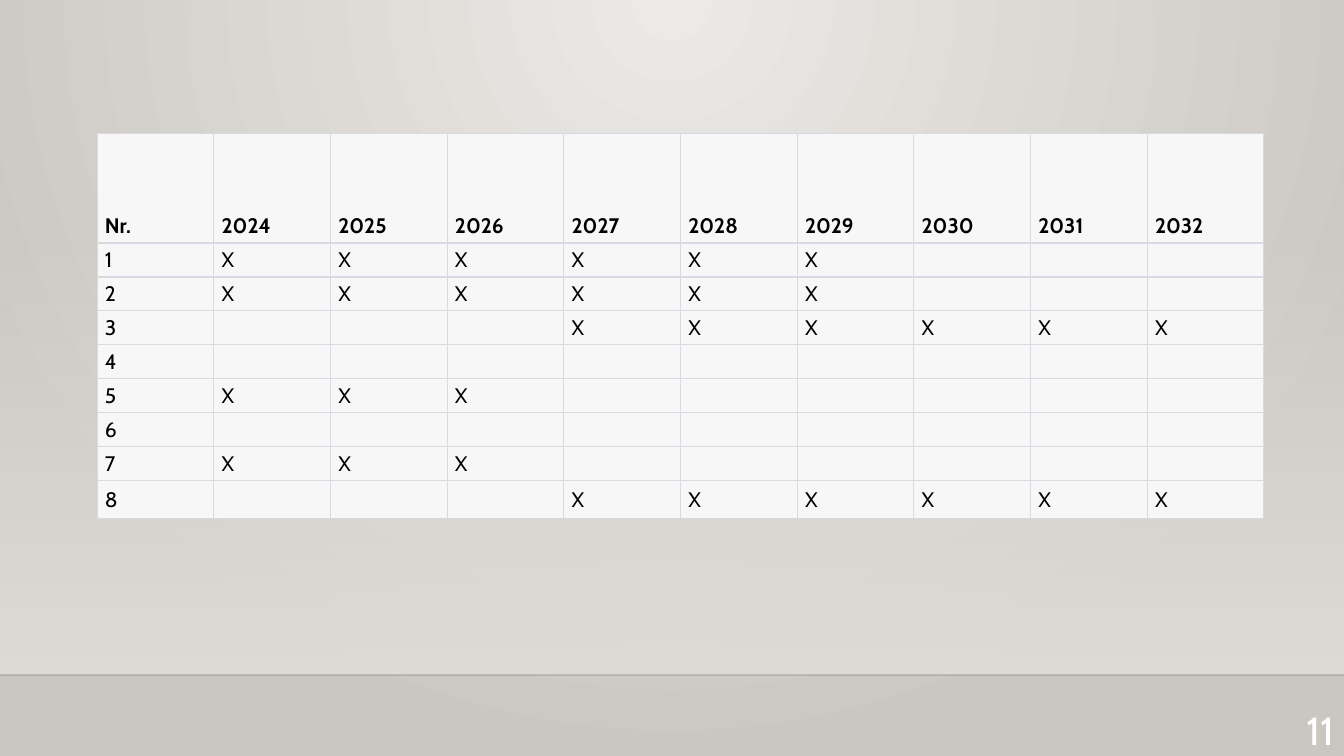
from lxml import etree
from pptx import Presentation
from pptx.dml.color import RGBColor
from pptx.enum.shapes import MSO_CONNECTOR, MSO_SHAPE
from pptx.enum.text import MSO_ANCHOR, PP_ALIGN
from pptx.oxml.ns import qn
from pptx.util import Pt

RECTANGLE = MSO_SHAPE.RECTANGLE
STRAIGHT = MSO_CONNECTOR.STRAIGHT
BOTTOM, MIDDLE = MSO_ANCHOR.BOTTOM, MSO_ANCHOR.MIDDLE
RIGHT = PP_ALIGN.RIGHT
EMU_PER_PX = 12192000 / 1344
WIDTH, HEIGHT, FLOOR = 1344, 756, 675
FONT = "Cabin"
COLORS = {
    "glow": "ECEAE7", "edge": "CAC7C1", "wall": "DFDBD5", "floor_line": "000001",
    "cell": "F7F7F8", "border": "D9D9E3", "text": "000000", "number": "FFFFFF",
}
YEARS = range(2024, 2033)
EARLY, LATE = range(2024, 2027), range(2027, 2033)
SCHEDULE = [range(2024, 2030), range(2024, 2030), LATE, (), EARLY, (), EARLY, LATE]


def px(length):
    return round(length * EMU_PER_PX)


def color(name):
    return RGBColor.from_string(COLORS[name])


class SlideBuilder:
    """Draws styled elements on one blank slide."""

    def __init__(self, deck):
        deck.slide_width, deck.slide_height = px(WIDTH), px(HEIGHT)
        self.page = deck.slides.add_slide(deck.slide_layouts[6])

    def gradient(self, fill, first, last):
        fill.gradient()
        for stop, name in zip(fill.gradient_stops, (first, last)):
            stop.color.rgb = color(name)

    def alpha(self, element, percent):
        tint = next(element.iter(qn("a:srgbClr")))
        etree.SubElement(tint, qn("a:alpha")).set("val", str(percent * 1000))

    def background(self):
        self.gradient(self.page.background.fill, "glow", "edge")
        linear = next(self.page.element.iter(qn("a:lin")))
        radial = etree.Element(qn("a:path"), {"path": "circle"})
        focus = {"l": "43000", "t": "0", "r": "43000", "b": "100000"}
        etree.SubElement(radial, qn("a:fillToRect"), focus)
        linear.getparent().replace(linear, radial)

    def fading_panel(self, top, bottom):
        panel = self.page.shapes.add_shape(RECTANGLE, 0, px(top), px(WIDTH), px(bottom - top))
        panel.shadow.inherit = False
        panel.line.fill.background()
        self.gradient(panel.fill, "wall", "wall")
        panel.fill.gradient_angle = 270
        self.alpha(panel.element, 0)

    def line(self, top):
        line = self.page.shapes.add_connector(STRAIGHT, 0, px(top), px(WIDTH), px(top))
        line.line.color.rgb = color("floor_line")
        line.line.width = Pt(1)
        self.alpha(line.element, 20)
        etree.SubElement(line.element.spPr, qn("a:effectLst"))

    def style(self, para, size, name, bold=False):
        para.font.name = FONT
        para.font.size = Pt(size)
        para.font.bold = bold
        para.font.color.rgb = color(name)

    def page_number(self, number, left, top, width, height):
        box = self.page.shapes.add_textbox(px(left), px(top), px(width), px(height))
        box.text_frame.word_wrap = True
        para = box.text_frame.paragraphs[0]
        para.text = number
        para.alignment = RIGHT
        self.style(para, 28, "number")

    def borders(self, cell, top, bottom):
        properties = cell._tc.get_or_add_tcPr()
        sides = (("lnL", 0.5), ("lnR", 0.5), ("lnT", top), ("lnB", bottom))
        for index, (side, width) in enumerate(sides):
            border = etree.Element(qn(f"a:{side}"), {"w": str(Pt(width))})
            fill = etree.SubElement(border, qn("a:solidFill"))
            etree.SubElement(fill, qn("a:srgbClr"), {"val": COLORS["border"]})
            properties.insert(index, border)

    def cell(self, cell, text, header):
        cell.fill.solid()
        cell.fill.fore_color.rgb = color("cell")
        cell.vertical_anchor = BOTTOM if header else MIDDLE
        cell.margin_left = cell.margin_right = px(8)
        cell.margin_top = cell.margin_bottom = px(4)
        para = cell.text_frame.paragraphs[0]
        if text:
            para.text = text
        else:
            etree.SubElement(para._p, qn("a:endParaRPr"), {"sz": "1500"})
        self.style(para, 15, "text", header)

    def table(self, rows, left, top, width, heights):
        frame = self.page.shapes.add_table(
            len(rows), len(rows[0]), px(left), px(top), px(width), px(sum(heights)))
        table = frame.table
        table.first_row = table.horz_banding = False
        last = len(rows) - 1
        for index, (values, height) in enumerate(zip(rows, heights)):
            table.rows[index].height = px(height)
            for column, value in enumerate(values):
                cell = table.cell(index, column)
                self.cell(cell, value, index == 0)
                self.borders(cell, 0.5 if index == 0 else 1, 0.5 if index == last else 1)


def main():
    deck = Presentation()
    slide = SlideBuilder(deck)
    slide.background()
    slide.fading_panel(223, FLOOR)
    slide.line(FLOOR)
    slide.page_number("11", 1243, 701, 101, 55)
    rows = [["Nr.", *map(str, YEARS)]]
    for number, active in enumerate(SCHEDULE, 1):
        rows.append([str(number), *("X" if year in active else "" for year in YEARS)])
    slide.table(rows, 97, 133, 1167, [110] + [34] * 7 + [38])
    deck.save("out.pptx")


if __name__ == "__main__":
    main()
